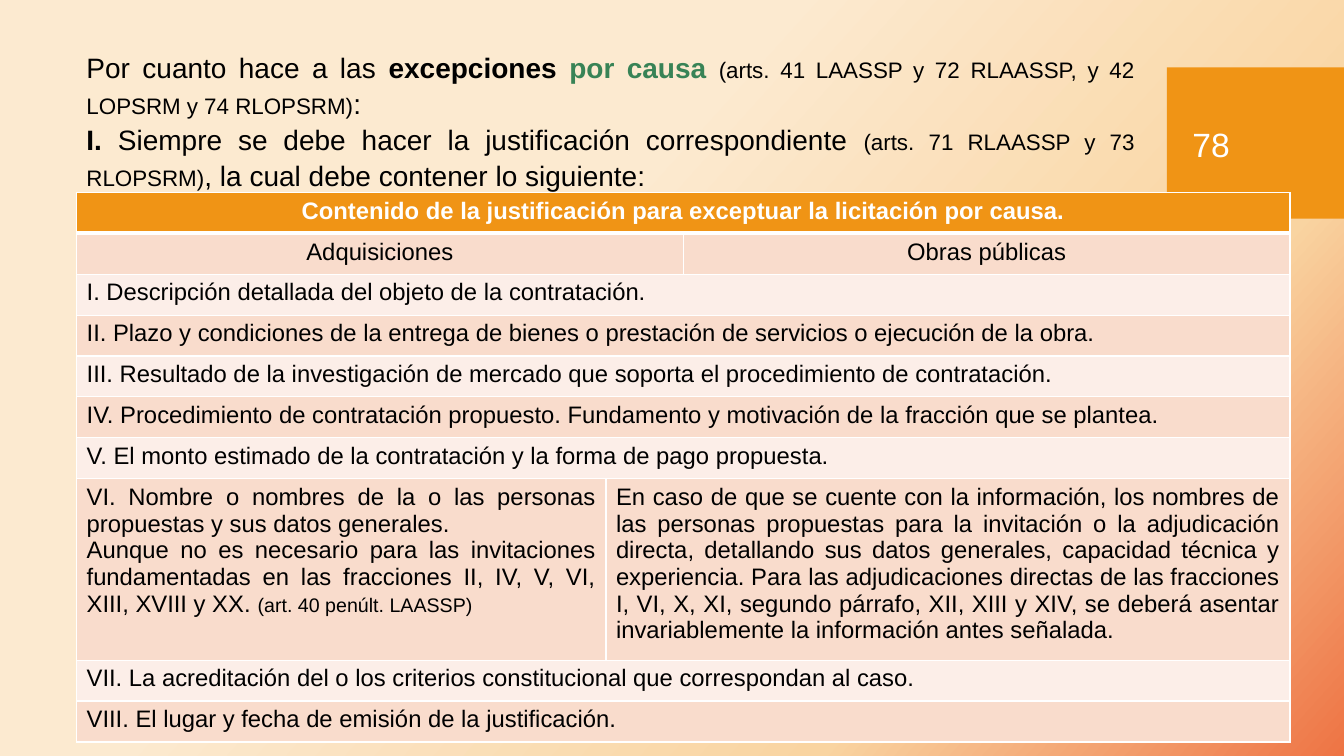
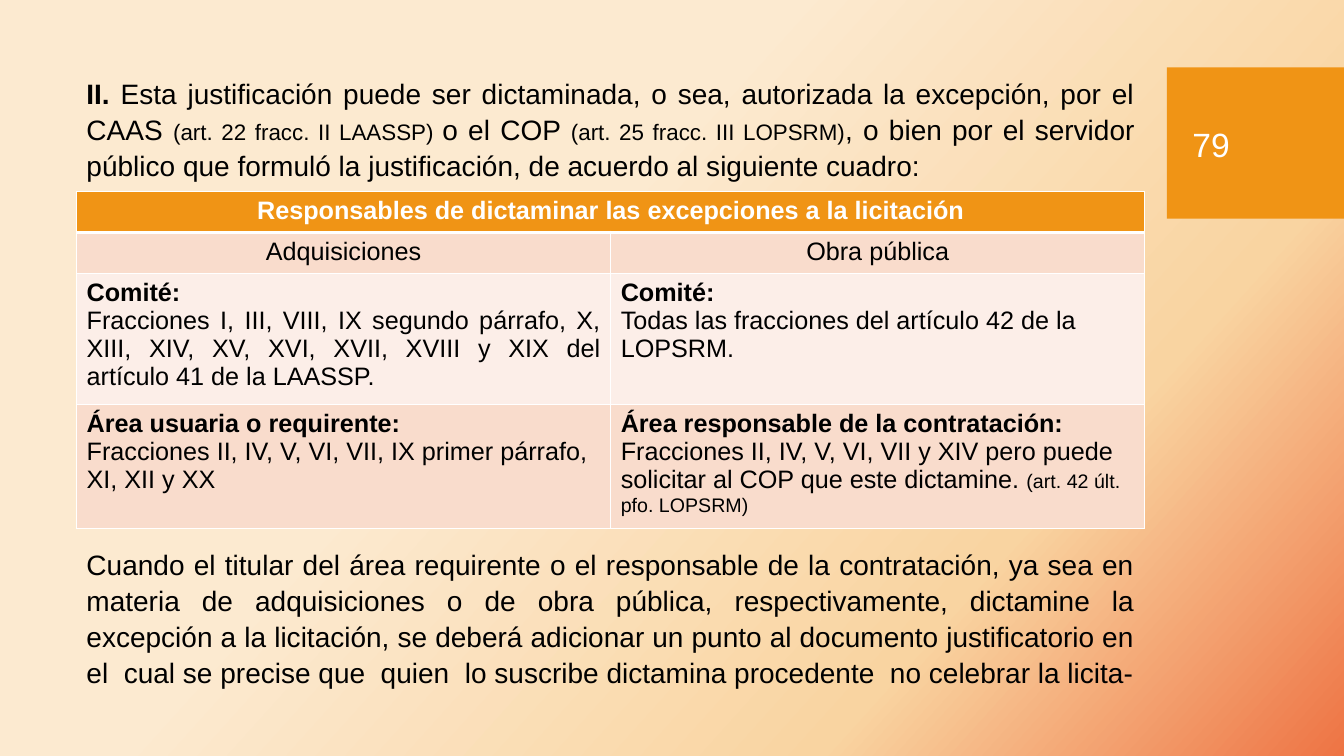
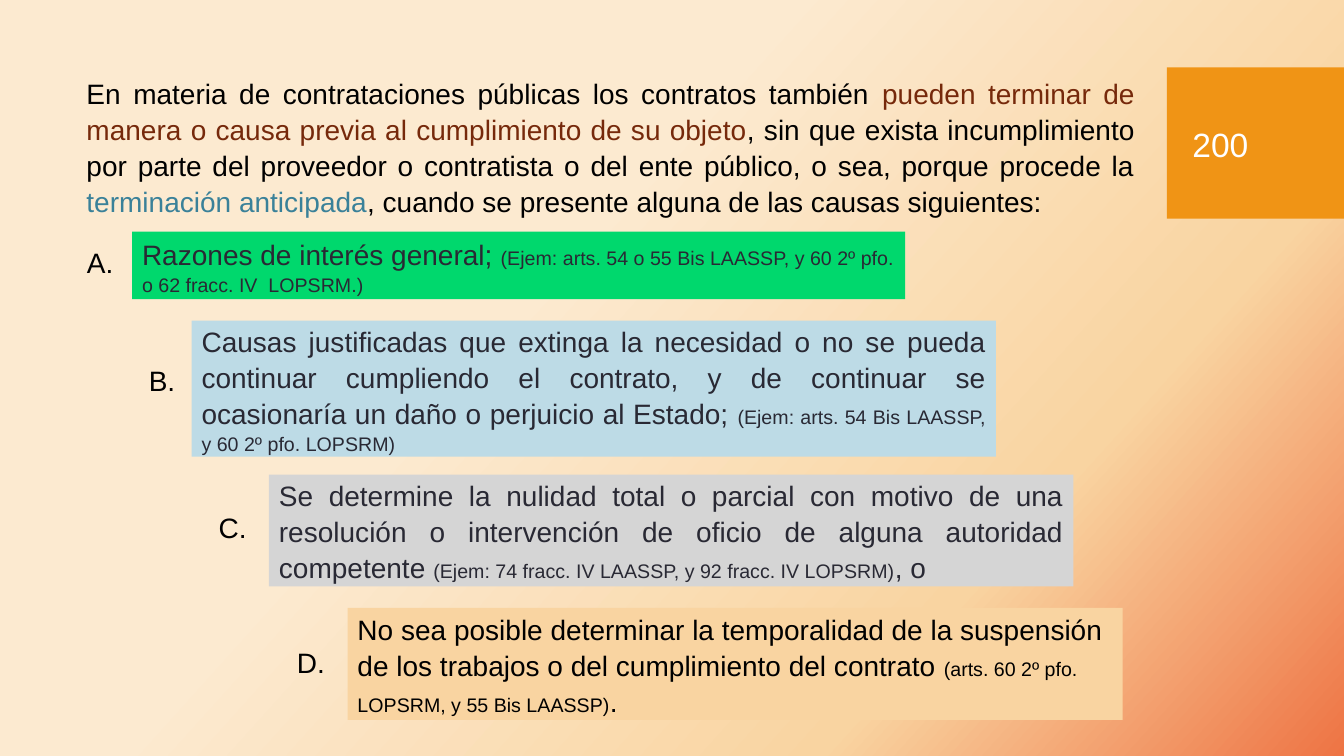
from copy import deepcopy
from dataclasses import dataclass

from lxml.etree import SubElement as Sub
from pptx import Presentation
from pptx.dml.color import RGBColor as Rgb
from pptx.enum.shapes import MSO_SHAPE as Form
from pptx.enum.text import MSO_ANCHOR as Anchor, PP_ALIGN as Align
from pptx.oxml.ns import qn
from pptx.util import Cm, Pt


@dataclass(frozen=True)
class Theme:
    font: str = "Arial"
    white: str = "FFFFFF"
    black: str = "000000"
    ink: str = "292934"
    orange: str = "F09415"
    rose: str = "F9DCCC"
    pale: str = "FCEEE8"
    green: str = "388356"
    brown: str = "76290B"
    teal: str = "3A8199"
    lime: str = "00D86D"
    sky: str = "BDDBE6"
    grey: str = "D5D5D5"
    sand: str = "F9D4A1"
    cream: str = "FCEAD0"
    coral: str = "EE7444"
    page: int = 24
    body: int = 20
    cite: int = 16
    note: int = 14


look = Theme()
LEFT, MID, JUST = Align.LEFT, Align.CENTER, Align.JUSTIFY
BOLD = {"bold": True}
CITE = {"size": look.cite}
NOTE = {"size": look.note}
EDGE, WIDE = 1.93, 26.92


def write(frame, paras, lead=1.0, **base):
    """Fill a frame with (align, runs) pairs; a run is text or (text, format)."""
    frame.word_wrap = True
    for i, (align, runs) in enumerate(paras):
        para = frame.paragraphs[0] if i == 0 else frame.add_paragraph()
        para.alignment, para.line_spacing = align, lead
        for item in runs:
            text, own = (item, {}) if isinstance(item, str) else item
            run = para.add_run()
            run.text = text
            form = {"name": look.font, "size": look.body, "bold": False,
                    "color": look.black} | base | own
            run.font.color.rgb = Rgb.from_string(form.pop("color"))
            form["size"] = Pt(form["size"])
            for key, value in form.items():
                setattr(run.font, key, value)


def box(slide, place, paras, fill=None, **base):
    """Add a text box, or a plain rectangle when a fill is given."""
    place = [Cm(n) for n in place]
    if fill:
        shape = slide.shapes.add_shape(Form.RECTANGLE, *place)
        shape.shadow.inherit = False
        shape.fill.solid()
        shape.fill.fore_color.rgb = Rgb.from_string(fill)
        shape.line.fill.background()
        shape.text_frame.vertical_anchor = Anchor.MIDDLE
    else:
        shape = slide.shapes.add_textbox(*place)
    write(shape.text_frame, paras, lead=1.07, **base)
    return shape


deck = Presentation()
deck.slide_width, deck.slide_height = Cm(33.87), Cm(19.05)

# Shared background
back = deck.slide_master.background.fill
back.gradient()
back.gradient_angle = 318
first = back.gradient_stops[0]
stops = deck.slide_master.element.find(".//" + qn("a:gsLst"))
stops.append(deepcopy(stops[0]))
tints = [(0.39, look.cream), (0.74, look.sand), (1, look.coral)]
for stop, (spot, tint) in zip(back.gradient_stops, tints):
    stop.position = spot
    stop.color.rgb = Rgb.from_string(tint)

# Slides with their page band
slides = []
for page in ("78", "79", "200"):
    slide = deck.slides.add_slide(deck.slide_layouts[6])
    band = box(slide, (29.41, 1.7, 4.46, 3.81), [(LEFT, [page])],
               look.orange, size=look.page, color=look.white)
    band.text_frame.margin_left = Cm(0.64)
    slides.append(slide)
cause, judge, ends = slides

# Opening texts
box(cause, (EDGE, 1.09, WIDE, 3.7), [
    (JUST, ["Por cuanto hace a las ", ("excepciones ", BOLD),
            ("por causa ", {"bold": True, "color": look.green}),
            ("(arts. 41 LAASSP y 72 RLAASSP, y 42 LOPSRM y 74 RLOPSRM)", CITE),
            ": "]),
    (JUST, [("I. ", BOLD),
            "Siempre se debe hacer la justificación correspondiente ",
            ("(arts. 71 RLAASSP y 73 RLOPSRM)", CITE),
            ", la cual debe contener lo siguiente:"])])
box(judge, (EDGE, 1.75, WIDE, 2.9), [
    (JUST, [("II. ", BOLD),
            "Esta justificación puede ser dictaminada, o sea, autorizada la "
            "excepción, por el CAAS ", ("(art. 22 fracc. II LAASSP) ", CITE),
            "o el COP ", ("(art. 25 fracc. III LOPSRM)", CITE),
            ", o bien por el servidor público que formuló la justificación, "
            "de acuerdo al siguiente cuadro:"])])
box(judge, (EDGE, 13.61, WIDE, 3.8), [
    (JUST, ["Cuando el titular del área requirente o el responsable de la "
            "contratación, ya sea en materia de adquisiciones o de obra "
            "pública, respectivamente, dictamine la excepción a la "
            "licitación, se deberá adicionar un punto al documento "
            "justificatorio en el  cual se precise que  quien  lo suscribe "
            "dictamina procedente  no celebrar la licita-"])])
box(ends, (EDGE, 1.75, WIDE, 3.8), [
    (JUST, ["En materia de contrataciones públicas los contratos también ",
            ("pueden terminar de manera o causa previa al cumplimiento de su "
             "objeto", {"color": look.brown}),
            ", sin que exista incumplimiento por parte del proveedor o "
            "contratista o del ente público, o sea, porque procede la ",
            ("terminación anticipada", {"color": look.teal}),
            ", cuando se presente alguna de las causas siguientes: "])])

# Table rows: each cell is (first column, last column, paragraphs)
points = [[(0, 2, [(LEFT, [text])])] for text in (
    "I. Descripción detallada del objeto de la contratación.",
    "II. Plazo y condiciones de la entrega de bienes o prestación de "
    "servicios o ejecución de la obra.",
    "III. Resultado de la investigación de mercado que soporta el "
    "procedimiento de contratación.",
    "IV. Procedimiento de contratación propuesto. Fundamento y motivación "
    "de la fracción que se plantea.",
    "V. El monto estimado de la contratación y la forma de pago propuesta.",
    "VII. La acreditación del o los criterios constitucional que "
    "correspondan al caso.",
    "VIII. El lugar y fecha de emisión de la justificación.")]
people = [
    (0, 0, [
        (JUST, ["VI. Nombre o nombres de la o las personas propuestas y sus "
                "datos generales. "]),
        (JUST, ["Aunque no es necesario para las invitaciones fundamentadas "
                "en las fracciones II, IV, V, VI, XIII, XVIII y XX. ",
                ("(art. 40 penúlt. LAASSP)", NOTE)])]),
    (1, 2, [
        (JUST, ["En caso de que se cuente con la información, los nombres de "
                "las personas propuestas para la invitación o la adjudicación "
                "directa, detallando sus datos generales, capacidad técnica y "
                "experiencia. Para las adjudicaciones directas de las "
                "fracciones I, VI, X, XI, segundo párrafo, XII, XIII y XIV, "
                "se deberá asentar invariablemente la información antes "
                "señalada. "])])]
needs = [
    [(0, 2, [(MID, ["Contenido de la justificación para exceptuar la "
                    "licitación por causa."])])],
    [(0, 1, [(MID, ["Adquisiciones"])]), (2, 2, [(MID, ["Obras públicas"])])],
    *points[:5], people, *points[5:]]
roles = [
    [(0, 1, [(MID, ["Responsables de dictaminar las excepciones a la "
                    "licitación"])])],
    [(0, 0, [(MID, ["Adquisiciones"])]), (1, 1, [(MID, ["Obra pública"])])],
    [(0, 0, [(LEFT, [("Comité:", BOLD)]),
             (JUST, ["Fracciones I, III, VIII, IX segundo párrafo, X, XIII, "
                     "XIV, XV, XVI, XVII, XVIII y XIX del artículo 41 de la "
                     "LAASSP. "])]),
     (1, 1, [(LEFT, [("Comité:", BOLD)]),
             (LEFT, ["Todas las fracciones del artículo 42 de la LOPSRM."])])],
    [(0, 0, [(LEFT, [("Área usuaria o requirente:", BOLD)]),
             (LEFT, ["Fracciones II, IV, V, VI, VII, IX primer párrafo, XI, "
                     "XII y XX"])]),
     (1, 1, [(LEFT, [("Área responsable de la contratación:", BOLD)]),
             (LEFT, ["Fracciones II, IV, V, VI, VII y XIV pero puede "
                     "solicitar al COP que este dictamine. ",
                     ("(art. 42 últ. pfo. LOPSRM)", NOTE)])])]]

# Tables
ROW = 1.03
grids = [
    (cause, needs, 4.85, [13.34, 1.95, 15.29], [ROW] * 7 + [4.29] + [ROW] * 2, 17),
    (judge, roles, 4.83, [WIDE / 2] * 2, [ROW, ROW, 3.1, 2.95], 18)]
for slide, rows, top, cols, tall, size in grids:
    table = slide.shapes.add_table(len(rows), len(cols), Cm(EDGE), Cm(top),
                                   Cm(sum(cols)), Cm(sum(tall))).table
    for col, width in zip(table.columns, cols):
        col.width = Cm(width)
    for r, cells in enumerate(rows):
        table.rows[r].height = Cm(tall[r])
        head = r == 0
        for start, end, paras in cells:
            cell = table.cell(r, start)
            if end > start:
                cell.merge(table.cell(r, end))
            write(cell.text_frame, paras, size=size, **(
                {"bold": True, "color": look.white} if head else {}))
        for c in range(len(cols)):
            cell = table.cell(r, c)
            cell.fill.solid()
            cell.fill.fore_color.rgb = Rgb.from_string(
                look.orange if head else look.rose if r % 2 else look.pale)
            # White borders, heavier under the heading
            props = cell._tc.get_or_add_tcPr()
            for i, side in enumerate("LRTB"):
                heavy = (r, side) in ((0, "B"), (1, "T"))
                line = Sub(props, qn("a:ln" + side), w=str(Pt(3 if heavy else 1)))
                Sub(Sub(line, qn("a:solidFill")), qn("a:srgbClr"), val=look.white)
                props.insert(i, line)

# Causes of early ending: letter, its left and top, box place, fill, ink, text
steps = [
    ("A.", 1.94, 6, (3.33, 5.84, 19.48, 1.7), look.lime, look.ink, LEFT,
     ["Razones de interés general; ",
      ("(Ejem: arts. 54 o 55 Bis LAASSP, y 60 2º pfo. o 62 fracc. IV  "
       "LOPSRM.)", NOTE)]),
    ("B.", 3.5, 8.97, (4.83, 8.08, 20.27, 3.43), look.sky, look.ink, JUST,
     ["Causas justificadas que extinga la necesidad o no se pueda continuar "
      "cumpliendo el contrato, y de continuar se ocasionaría un daño o "
      "perjuicio al Estado; ",
      ("(Ejem: arts. 54 Bis LAASSP, y 60 2º pfo. LOPSRM)", NOTE)]),
    ("C.", 5.26, 12.69, (6.78, 11.96, 20.27, 2.82), look.grey, look.ink, JUST,
     ["Se determine la nulidad total o parcial con motivo de una resolución "
      "o intervención de oficio de alguna autoridad competente ",
      ("(Ejem: 74 fracc. IV LAASSP, y 92 fracc. IV LOPSRM)", NOTE), ", o"]),
    ("D.", 7.23, 16.07, (8.76, 15.32, 19.53, 2.82), look.sand, look.black, LEFT,
     ["No sea posible determinar la temporalidad de la suspensión de los "
      "trabajos o del cumplimiento del contrato ",
      ("(arts. 60 2º pfo. LOPSRM, y 55 Bis LAASSP)", NOTE), "."])]
for mark, left, top, place, fill, ink, align, runs in steps:
    box(ends, (left, top, 1.4, 1.1), [(LEFT, [mark])])
    box(ends, place, [(align, runs)], fill, color=ink)

deck.save("out.pptx")
